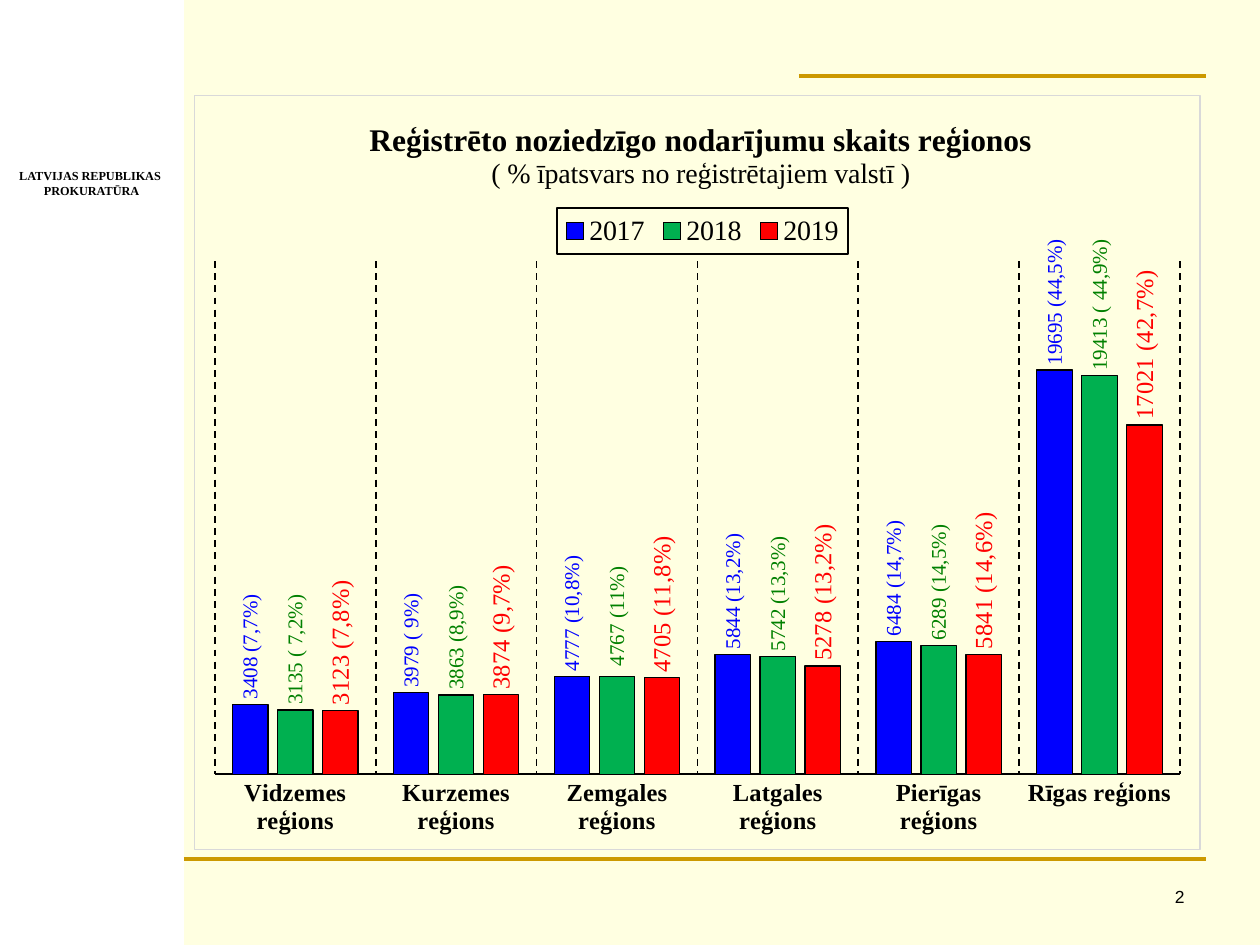
from dataclasses import dataclass

from lxml.etree import SubElement
from pptx import Presentation
from pptx.chart.data import CategoryChartData
from pptx.dml.color import RGBColor
from pptx.enum.chart import XL_CHART_TYPE, XL_LABEL_POSITION, XL_LEGEND_POSITION, XL_TICK_MARK
from pptx.enum.dml import MSO_LINE
from pptx.enum.shapes import MSO_CONNECTOR, MSO_SHAPE
from pptx.enum.text import PP_ALIGN
from pptx.oxml import parse_xml
from pptx.oxml.ns import nsdecls, qn
from pptx.util import Inches, Pt


@dataclass(frozen=True)
class Theme:
    background: str = "FFFFE1"
    panel: str = "FFFFFF"
    rule: str = "CC9900"
    text: str = "000000"
    frame: str = "D9D9D9"
    serif: str = "Times New Roman"
    sans: str = "Arial"
    institution_size: float = 7
    number_size: float = 10
    title_size: float = 18
    legend_size: float = 16
    category_size: float = 14


@dataclass(frozen=True)
class YearSeries:
    name: str
    values: tuple
    labels: tuple
    fill: str
    label_color: str
    label_size: float


THEME = Theme()
REGIONS = ("Vidzemes", "Kurzemes", "Zemgales", "Latgales", "Pierīgas", "Rīgas")
YEARS = (
    YearSeries("2017", (3408, 3979, 4777, 5844, 6484, 19695),
               ("3408 (7,7%)", "3979 ( 9%)", "4777 (10,8%)", "5844 (13,2%)",
                "6484 (14,7%)", "19695 (44,5%)"), "0000FF", "0000FF", 12),
    YearSeries("2018", (3135, 3863, 4767, 5742, 6289, 19413),
               ("3135 ( 7,2%)", "3863 (8,9%)", " 4767 (11%)", "5742 (13,3%)",
                "6289 (14,5%)", "19413 ( 44,9%)"), "00B050", "008000", 12),
    YearSeries("2019", (3123, 3874, 4705, 5278, 5841, 17021),
               ("3123 (7,8%)", "3874 (9,7%)", "4705 (11,8%)", "5278 (13,2%)",
                "5841 (14,6%)", "17021 (42,7%)"), "FF0000", "FF0000", 14),
)


def style_font(font, size, color=THEME.text, bold=False, name=THEME.serif):
    font.name = name
    font.size = Pt(size)
    font.bold = bold
    font.color.rgb = RGBColor.from_string(color)


def style_line(line, color, width):
    line.color.rgb = RGBColor.from_string(color)
    line.width = Pt(width)


def add_run(paragraph, text, size, **style):
    run = paragraph.add_run()
    run.text = text
    style_font(run.font, size, **style)


def add_panel(slide, left, top, width, height):
    shape = slide.shapes.add_shape(
        MSO_SHAPE.RECTANGLE, Inches(left), Inches(top), Inches(width), Inches(height))
    shape.shadow.inherit = False
    shape.fill.solid()
    shape.fill.fore_color.rgb = RGBColor.from_string(THEME.panel)
    shape.line.fill.background()


def add_rule(slide, left, right, top):
    connector = slide.shapes.add_connector(
        MSO_CONNECTOR.STRAIGHT, Inches(left), Inches(top), Inches(right), Inches(top))
    style_line(connector.line, THEME.rule, 2.25)
    SubElement(connector._element.spPr, qn("a:effectLst"))


def add_text(slide, position, lines, alignment, size, wrap=True, **style):
    box = slide.shapes.add_textbox(*map(Inches, position))
    frame = box.text_frame
    frame.word_wrap = wrap
    for index, line in enumerate(lines):
        paragraph = frame.add_paragraph() if index else frame.paragraphs[0]
        paragraph.alignment = alignment
        add_run(paragraph, line, size, **style)


def set_layout(element, index, inner=False, **fractions):
    for existing in element.findall(qn("c:layout")):
        element.remove(existing)
    layout = parse_xml(f"<c:layout {nsdecls('c')}><c:manualLayout/></c:layout>")
    manual = layout[0]
    settings = {"layoutTarget": "inner"} if inner else {}
    settings.update(xMode="edge", yMode="edge", **fractions)
    for tag, value in settings.items():
        SubElement(manual, qn(f"c:{tag}")).set("val", str(value))
    element.insert(index, layout)


def add_frame(element, fill, color, width):
    element.find(qn("c:txPr")).addprevious(parse_xml(
        f"<c:spPr {nsdecls('c', 'a')}>"
        f'<a:solidFill><a:srgbClr val="{fill}"/></a:solidFill>'
        f'<a:ln w="{Pt(width)}"><a:solidFill><a:srgbClr val="{color}"/></a:solidFill></a:ln>'
        "</c:spPr>"))


def style_title(chart):
    frame = chart.chart_title.text_frame
    add_run(frame.paragraphs[0], "Reģistrēto noziedzīgo nodarījumu skaits reģionos",
            THEME.title_size, bold=True)
    add_run(frame.add_paragraph(), "( % īpatsvars no reģistrētajiem valstī )",
            THEME.legend_size)
    set_layout(chart.chart_title._element, 1, x=0.17, y=0.03)


def style_legend(chart):
    chart.has_legend = True
    legend = chart.legend
    legend.position = XL_LEGEND_POSITION.TOP
    legend.include_in_layout = False
    style_font(legend.font, THEME.legend_size)
    add_frame(legend._element, THEME.background, THEME.text, 1.25)
    set_layout(legend._element, 1, x=0.36, y=0.15, w=0.29, h=0.06)


def style_axes(chart):
    category_axis = chart.category_axis
    category_axis.major_tick_mark = XL_TICK_MARK.NONE
    category_axis.has_major_gridlines = True
    gridlines = category_axis.major_gridlines.format.line
    style_line(gridlines, THEME.text, 1)
    gridlines.dash_style = MSO_LINE.DASH
    style_line(category_axis.format.line, THEME.text, 1.25)
    style_font(category_axis.tick_labels.font, THEME.category_size, bold=True)
    value_axis = chart.value_axis
    value_axis.minimum_scale = 0
    value_axis.maximum_scale = 25000
    value_axis.has_major_gridlines = False
    value_axis.visible = False


def style_series(series, year):
    series.format.fill.solid()
    series.format.fill.fore_color.rgb = RGBColor.from_string(year.fill)
    style_line(series.format.line, THEME.text, 0.75)
    labels = series.data_labels
    labels.show_value = True
    labels.number_format = "#,##0"
    labels.number_format_is_linked = False
    labels.position = XL_LABEL_POSITION.OUTSIDE_END
    style_font(labels.font, year.label_size, color=year.label_color)
    for index, text in enumerate(year.labels):
        label = series.points[index].data_label
        add_run(label.text_frame.paragraphs[0], text, year.label_size, color=year.label_color)
        label.position = XL_LABEL_POSITION.OUTSIDE_END
    for body in labels._element.iter(qn("a:bodyPr")):
        body.set("rot", "-5400000")
        body.set("vert", "horz")


def add_region_chart(slide, left, top, width, height):
    data = CategoryChartData(number_format="#,##0")
    data.categories = [f"{region} reģions" for region in REGIONS]
    for year in YEARS:
        data.add_series(year.name, year.values)
    chart = slide.shapes.add_chart(
        XL_CHART_TYPE.COLUMN_CLUSTERED, Inches(left), Inches(top),
        Inches(width), Inches(height), data).chart
    style_font(chart.font, 10)
    add_frame(chart._chartSpace, THEME.background, THEME.frame, 0.75)
    style_title(chart)
    style_legend(chart)
    style_axes(chart)
    plot = chart.plots[0]
    plot.vary_by_categories = False
    plot.gap_width = 100
    plot.overlap = -27
    for series, year in zip(plot.series, YEARS):
        style_series(series, year)
    set_layout(chart._chartSpace.chart.plotArea, 0, inner=True, x=0.02, y=0.22, w=0.96, h=0.68)


def main():
    presentation = Presentation()
    presentation.slide_width, presentation.slide_height = Inches(10), Inches(7.5)
    slide = presentation.slides.add_slide(presentation.slide_layouts[6])
    slide.background.fill.solid()
    slide.background.fill.fore_color.rgb = RGBColor.from_string(THEME.background)
    add_panel(slide, 0, 0, 1.46, 7.5)
    add_rule(slide, 1.46, 9.57, 6.82)
    add_rule(slide, 6.34, 9.57, 0.6)
    add_text(slide, (0.05, 1.29, 1.33, 0.33), ("LATVIJAS REPUBLIKAS", " PROKURATŪRA"),
             PP_ALIGN.CENTER, THEME.institution_size, wrap=False, bold=True)
    add_text(slide, (7.42, 6.98, 2.08, 0.35), ("2",), PP_ALIGN.RIGHT,
             THEME.number_size, name=THEME.sans)
    add_region_chart(slide, 1.54, 0.75, 7.99, 6)
    presentation.save("out.pptx")


if __name__ == "__main__":
    main()
